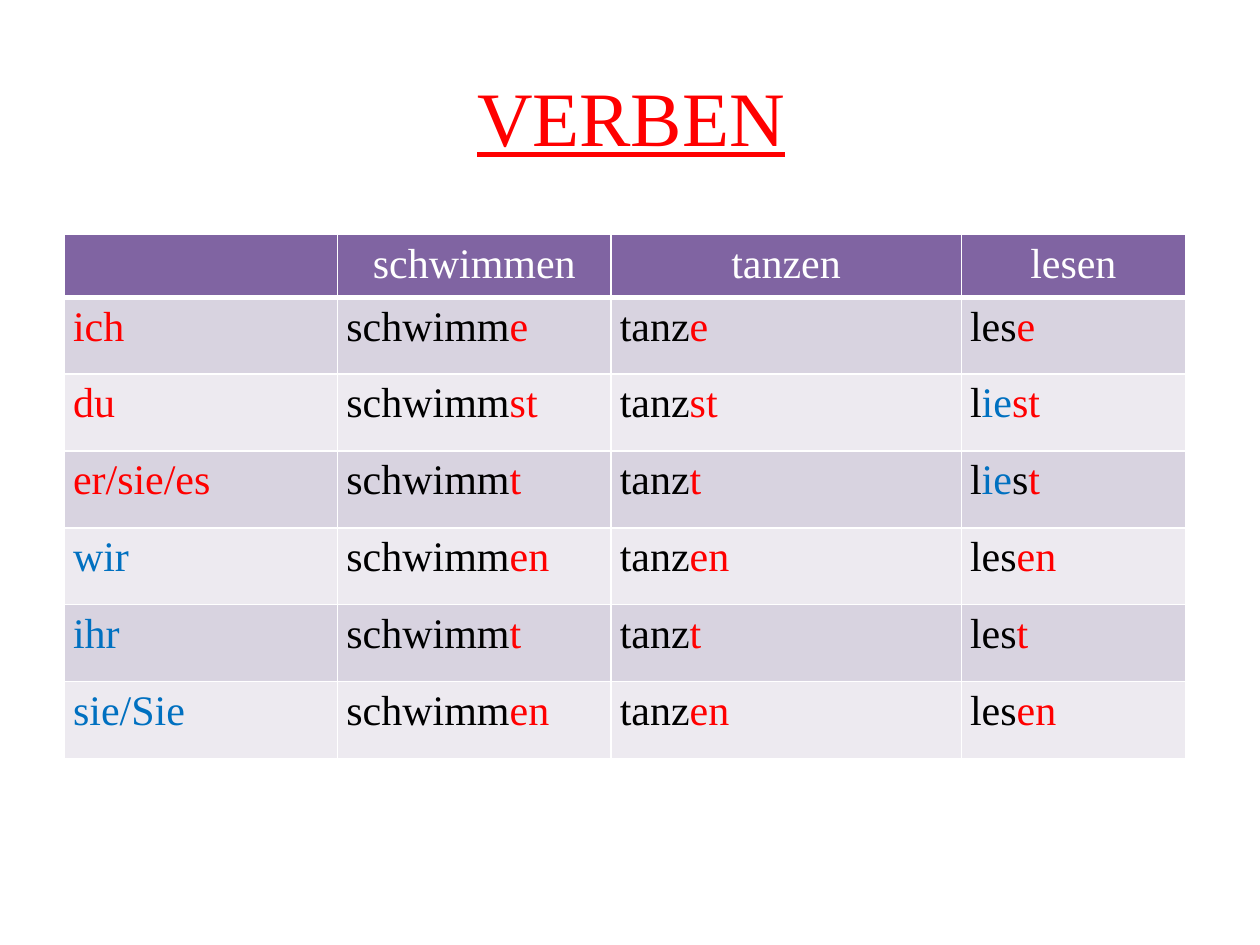
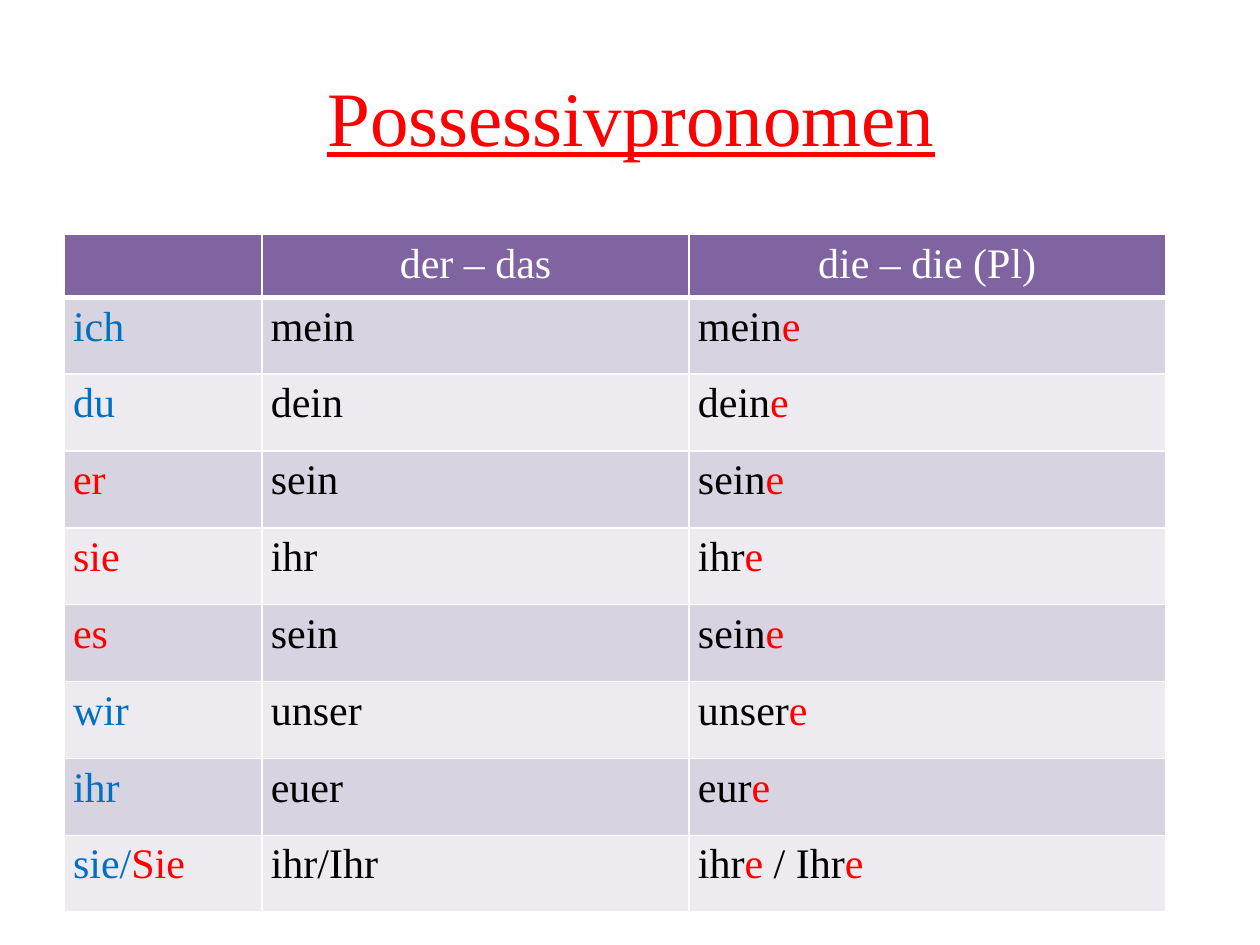
"""Build two German grammar slides: verb conjugation and possessive pronouns."""
import pptx
import pptx.dml.color
import pptx.enum.text
import pptx.oxml
import pptx.oxml.ns
import pptx.util

Inches = pptx.util.Inches
Pt = pptx.util.Pt
RGBColor = pptx.dml.color.RGBColor
PP_ALIGN = pptx.enum.text.PP_ALIGN

RED = RGBColor(0xFF, 0x00, 0x00)
BLUE = RGBColor(0x00, 0x70, 0xC0)
BLACK = RGBColor(0x00, 0x00, 0x00)
WHITE = RGBColor(0xFF, 0xFF, 0xFF)
HEADER_FILL = RGBColor(0x80, 0x64, 0xA2)
BAND_FILLS = (RGBColor(0xD8, 0xD3, 0xE0), RGBColor(0xED, 0xEA, 0xF0))

FONT = "Times New Roman"
LEFT = 0.51
TABLE_TOP = 1.86
HEADER_HEIGHT = 0.46
ROW_HEIGHT = 0.61

VERB_ENDINGS = [
    ("ich", RED, "e"),
    ("du", RED, "st"),
    ("er/sie/es", RED, "t"),
    ("wir", BLUE, "en"),
    ("ihr", BLUE, "t"),
    ("sie/Sie", BLUE, "en"),
]
LESEN_VOWEL_CHANGE = {
    "du": [("l", BLACK), ("ie", BLUE), ("st", RED)],
    "er/sie/es": [("l", BLACK), ("ie", BLUE), ("s", BLACK), ("t", RED)],
}
POSSESSIVES = [
    ("ich", BLUE, "mein", "mein"),
    ("du", BLUE, "dein", "dein"),
    ("er", RED, "sein", "sein"),
    ("sie", RED, "ihr", "ihr"),
    ("es", RED, "sein", "sein"),
    ("wir", BLUE, "unser", "unser"),
    ("ihr", BLUE, "euer", "eur"),
]


def with_ending(stem, ending):
    """Return a black stem followed by a red ending."""
    return [(stem, BLACK), (ending, RED)]


def verb_rows():
    """Return the conjugated forms, one row per pronoun."""
    return [
        [[(pronoun, color)],
         with_ending("schwimm", ending),
         with_ending("tanz", ending),
         LESEN_VOWEL_CHANGE.get(pronoun, with_ending("les", ending))]
        for pronoun, color, ending in VERB_ENDINGS
    ]


def possessive_rows():
    """Return the possessive forms, one row per pronoun."""
    rows = [
        [[(pronoun, color)], [(base, BLACK)], with_ending(stem, "e")]
        for pronoun, color, base, stem in POSSESSIVES
    ]
    rows.append([[("sie/", BLUE), ("Sie", RED)], [("ihr/Ihr", BLACK)],
                 with_ending("ihr", "e") + with_ending(" / Ihr", "e")])
    return rows


def add_run(paragraph, text, size, color):
    """Append a formatted run and return it."""
    run = paragraph.add_run()
    run.text = text
    run.font.name = FONT
    run.font.size = Pt(size)
    run.font.bold = False
    run.font.color.rgb = color
    return run


def add_title(slide, text):
    """Add the underlined red title."""
    title = slide.shapes.add_textbox(
        Inches(LEFT), Inches(0.29), Inches(9), Inches(1.25))
    text_frame = title.text_frame
    text_frame.word_wrap = True
    text_frame.vertical_anchor = pptx.enum.text.MSO_ANCHOR.MIDDLE
    paragraph = text_frame.paragraphs[0]
    paragraph.alignment = PP_ALIGN.CENTER
    add_run(paragraph, text, 44, RED).font.underline = True


def set_borders(cell, bottom_width):
    """Give a cell white borders, one point wide except at the bottom."""
    properties = cell._tc.get_or_add_tcPr()
    namespace = pptx.oxml.ns.nsdecls("a")
    for side, width in (("L", 1), ("R", 1), ("T", 1), ("B", bottom_width)):
        properties.append(pptx.oxml.parse_xml(
            f'<a:ln{side} {namespace} w="{Pt(width)}"><a:solidFill>'
            f'<a:srgbClr val="{WHITE}"/></a:solidFill></a:ln{side}>'))


def fill_cell(cell, runs, fill, alignment, bottom_width):
    """Write coloured runs into a cell and style it."""
    set_borders(cell, bottom_width)
    cell.fill.solid()
    cell.fill.fore_color.rgb = fill
    cell.margin_left = cell.margin_right = Inches(0.07)
    cell.margin_top = cell.margin_bottom = Inches(0.05)
    paragraph = cell.text_frame.paragraphs[0]
    paragraph.alignment = alignment
    for text, color in runs:
        add_run(paragraph, text, 24, color)


def add_grammar_table(slide, column_widths, headings, rows):
    """Add a banded table with an empty corner cell."""
    height = HEADER_HEIGHT + ROW_HEIGHT * len(rows)
    table = slide.shapes.add_table(
        len(rows) + 1, len(column_widths), Inches(LEFT), Inches(TABLE_TOP),
        Inches(sum(column_widths)), Inches(height)).table
    for column, width in zip(table.columns, column_widths):
        column.width = Inches(width)
    for row in table.rows:
        row.height = Inches(ROW_HEIGHT)
    table.rows[0].height = Inches(HEADER_HEIGHT)

    header = [[]] + [[(heading, WHITE)] for heading in headings]
    for column_index, runs in enumerate(header):
        fill_cell(table.cell(0, column_index), runs, HEADER_FILL,
                  PP_ALIGN.CENTER, 3)
    for row_index, row in enumerate(rows):
        for column_index, runs in enumerate(row):
            fill_cell(table.cell(row_index + 1, column_index), runs,
                      BAND_FILLS[row_index % 2], PP_ALIGN.LEFT, 1)


def add_grammar_slide(presentation, title, column_widths, headings, rows):
    """Add a slide holding a title and a grammar table."""
    slide = presentation.slides.add_slide(presentation.slide_layouts[6])
    add_title(slide, title)
    add_grammar_table(slide, column_widths, headings, rows)


def main():
    """Build and save the presentation."""
    presentation = pptx.Presentation()
    presentation.slide_width = Inches(10)
    presentation.slide_height = Inches(7.5)
    add_grammar_slide(presentation, "VERBEN", (2.17, 2.17, 2.78, 1.78),
                      ("schwimmen", "tanzen", "lesen"), verb_rows())
    add_grammar_slide(presentation, "Possessivpronomen", (1.57, 3.39, 3.78),
                      ("der – das", "die – die (Pl)"), possessive_rows())
    presentation.save("out.pptx")


if __name__ == "__main__":
    main()
